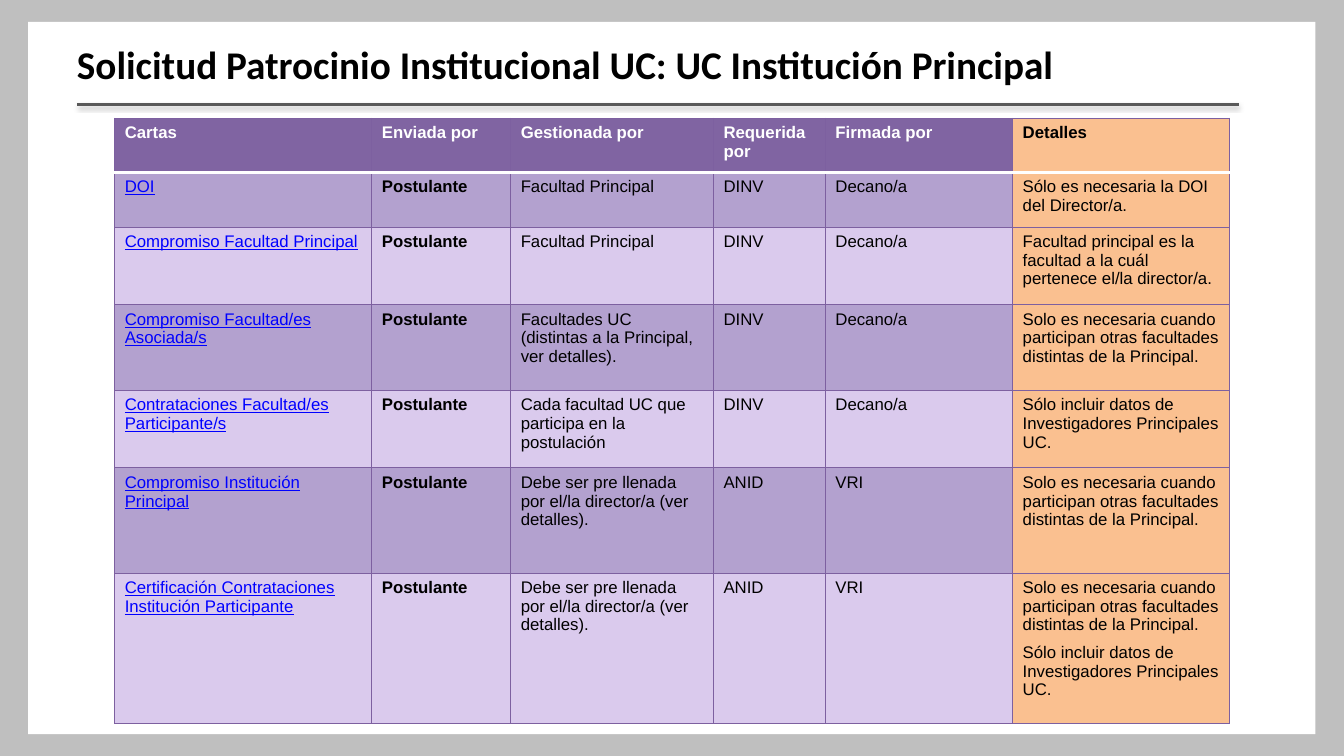
from dataclasses import dataclass

from lxml.etree import SubElement
from pptx import Presentation
from pptx.dml.color import RGBColor
from pptx.enum.shapes import MSO_CONNECTOR, MSO_SHAPE
from pptx.enum.text import MSO_ANCHOR, PP_ALIGN
from pptx.oxml import parse_xml
from pptx.oxml.ns import nsdecls, qn
from pptx.slide import Slide
from pptx.table import _Cell
from pptx.util import Cm, Pt

BLACK = RGBColor(0x00, 0x00, 0x00)
WHITE = RGBColor(0xFF, 0xFF, 0xFF)
FRAME_GREY = RGBColor(0xBF, 0xBF, 0xBF)
RULE_GREY = RGBColor(0x59, 0x59, 0x59)
PURPLE = RGBColor(0x80, 0x64, 0xA2)
BORDER_PURPLE = RGBColor(0x7D, 0x60, 0xA0)
BAND_DARK = RGBColor(0xB3, 0xA1, 0xCF)
BAND_LIGHT = RGBColor(0xDA, 0xCA, 0xED)
ORANGE = RGBColor(0xFA, 0xC0, 0x90)
LINK_BLUE = RGBColor(0x00, 0x00, 0xFF)

PAGE_WIDTH, PAGE_HEIGHT = 33.87, 19.05
COLUMN_WIDTHS = (6.48, 3.5, 5.11, 2.82, 4.72, 5.46)
ROW_HEIGHTS = (1.37, 1.37, 1.96, 2.15, 1.96, 2.65, 3.79)
HEADINGS = ("Cartas", "Enviada por", "Gestionada por", "Requerida por", "Firmada por", "Detalles")
LINK_COLUMN, SENDER_COLUMN, DETAIL_COLUMN = 0, 1, 5

OTHER_FACULTIES = "Solo es necesaria cuando participan otras facultades distintas de la Principal."
ONLY_RESEARCHERS = "Sólo incluir datos de Investigadores Principales UC."
PREFILLED = "Debe ser pre llenada por el/la director/a (ver detalles)."


@dataclass(frozen=True)
class Panel:
    left: float
    top: float
    width: float
    height: float
    color: RGBColor


@dataclass(frozen=True)
class Letter:
    name: str
    managed_by: str
    required_by: str
    signed_by: str
    details: str

    def texts(self) -> tuple[str, ...]:
        return (self.name, "Postulante", self.managed_by, self.required_by, self.signed_by, self.details)


PANELS = (
    Panel(0, 0, PAGE_WIDTH, PAGE_HEIGHT, FRAME_GREY),
    Panel(0.71, 0.55, 32.44, 17.95, WHITE),
)
LETTERS = (
    Letter("DOI", "Facultad Principal", "DINV", "Decano/a",
           "Sólo es necesaria la DOI del Director/a."),
    Letter("Compromiso Facultad Principal", "Facultad Principal", "DINV", "Decano/a",
           "Facultad principal es la facultad a la cuál pertenece el/la director/a."),
    Letter("Compromiso Facultad/es Asociada/s",
           "Facultades UC (distintas a la Principal, ver detalles).",
           "DINV", "Decano/a", OTHER_FACULTIES),
    Letter("Contrataciones Facultad/es Participante/s",
           "Cada facultad UC que participa en la postulación",
           "DINV", "Decano/a", ONLY_RESEARCHERS),
    Letter("Compromiso Institución Principal", PREFILLED, "ANID", "VRI", OTHER_FACULTIES),
    Letter("Certificación Contrataciones Institución Participante", PREFILLED, "ANID", "VRI",
           f"{OTHER_FACULTIES}\n{ONLY_RESEARCHERS}"),
)


def draw_panel(page: Slide, panel: Panel) -> None:
    box = page.shapes.add_shape(MSO_SHAPE.RECTANGLE, Cm(panel.left), Cm(panel.top),
                                Cm(panel.width), Cm(panel.height))
    box.shadow.inherit = False
    box.fill.solid()
    box.fill.fore_color.rgb = panel.color
    box.line.fill.background()


def draw_title(page: Slide) -> None:
    title = page.shapes.title
    title.element.getparent().append(title.element)
    title.left, title.top, title.width, title.height = Cm(1.94), Cm(1.02), Cm(30.96), Cm(1.2)
    frame = title.text_frame
    frame.text = "Solicitud Patrocinio Institucional UC: UC Institución Principal"
    frame.margin_left = frame.margin_right = frame.margin_top = frame.margin_bottom = 0
    frame.vertical_anchor = MSO_ANCHOR.TOP
    frame.word_wrap = True
    para = frame.paragraphs[0]
    para.alignment = PP_ALIGN.LEFT
    para.font.name = "Calibri"
    para.font.size = Pt(28)
    para.font.bold = True
    para.font.color.rgb = BLACK


def draw_rule(page: Slide) -> None:
    rule = page.shapes.add_connector(MSO_CONNECTOR.STRAIGHT, Cm(1.94), Cm(2.64), Cm(31.22), Cm(2.64))
    rule.line.color.rgb = RULE_GREY
    rule.line.width = Pt(2.25)
    rule.element.spPr.append(parse_xml(
        f'<a:effectLst {nsdecls("a")}>'
        f'<a:outerShdw blurRad="{Pt(3.1)}" dist="{Pt(1.6)}" dir="5400000" rotWithShape="0">'
        '<a:srgbClr val="000000"><a:alpha val="38000"/></a:srgbClr>'
        '</a:outerShdw></a:effectLst>'))


def set_border(cell: _Cell, side: str, color: RGBColor, points: float) -> None:
    properties = cell._tc.get_or_add_tcPr()
    line = SubElement(properties, qn(f"a:{side}"), w=str(Pt(points)))
    SubElement(SubElement(line, qn("a:solidFill")), qn("a:srgbClr"), val=str(color))


def cell_fill(row: int, column: int) -> RGBColor:
    if column == DETAIL_COLUMN:
        return ORANGE
    if row == 0:
        return PURPLE
    return BAND_DARK if row % 2 else BAND_LIGHT


def text_color(row: int, column: int) -> RGBColor:
    if row == 0:
        return BLACK if column == DETAIL_COLUMN else WHITE
    return LINK_BLUE if column == LINK_COLUMN else BLACK


def fill_cell(cell: _Cell, row: int, column: int, text: str) -> None:
    white_sides = {0: "lnB", 1: "lnT"}
    for side in ("lnL", "lnR", "lnT", "lnB"):
        if white_sides.get(row) == side:
            set_border(cell, side, WHITE, 2)
        else:
            set_border(cell, side, BORDER_PURPLE, 0.75)
    cell.fill.solid()
    cell.fill.fore_color.rgb = cell_fill(row, column)
    cell.text = text
    for index, para in enumerate(cell.text_frame.paragraphs):
        para.space_before = Pt(6 if index else 0)
        para.font.name = "Arial"
        para.font.size = Pt(12)
        para.font.bold = row == 0 or column == SENDER_COLUMN
        para.font.underline = row > 0 and column == LINK_COLUMN
        para.font.color.rgb = text_color(row, column)


def draw_table(page: Slide) -> None:
    table = page.shapes.add_table(len(ROW_HEIGHTS), len(COLUMN_WIDTHS), Cm(2.89), Cm(2.98),
                                  Cm(sum(COLUMN_WIDTHS)), Cm(sum(ROW_HEIGHTS))).table
    table.horz_banding = False
    for column, width in zip(table.columns, COLUMN_WIDTHS):
        column.width = Cm(width)
    for row, height in zip(table.rows, ROW_HEIGHTS):
        row.height = Cm(height)
    for row, texts in enumerate([HEADINGS, *(letter.texts() for letter in LETTERS)]):
        for column, text in enumerate(texts):
            fill_cell(table.cell(row, column), row, column, text)


def main() -> None:
    deck = Presentation()
    deck.slide_width, deck.slide_height = Cm(PAGE_WIDTH), Cm(PAGE_HEIGHT)
    page = deck.slides.add_slide(deck.slide_layouts[5])
    for panel in PANELS:
        draw_panel(page, panel)
    draw_title(page)
    draw_rule(page)
    draw_table(page)
    deck.save("out.pptx")


if __name__ == "__main__":
    main()
